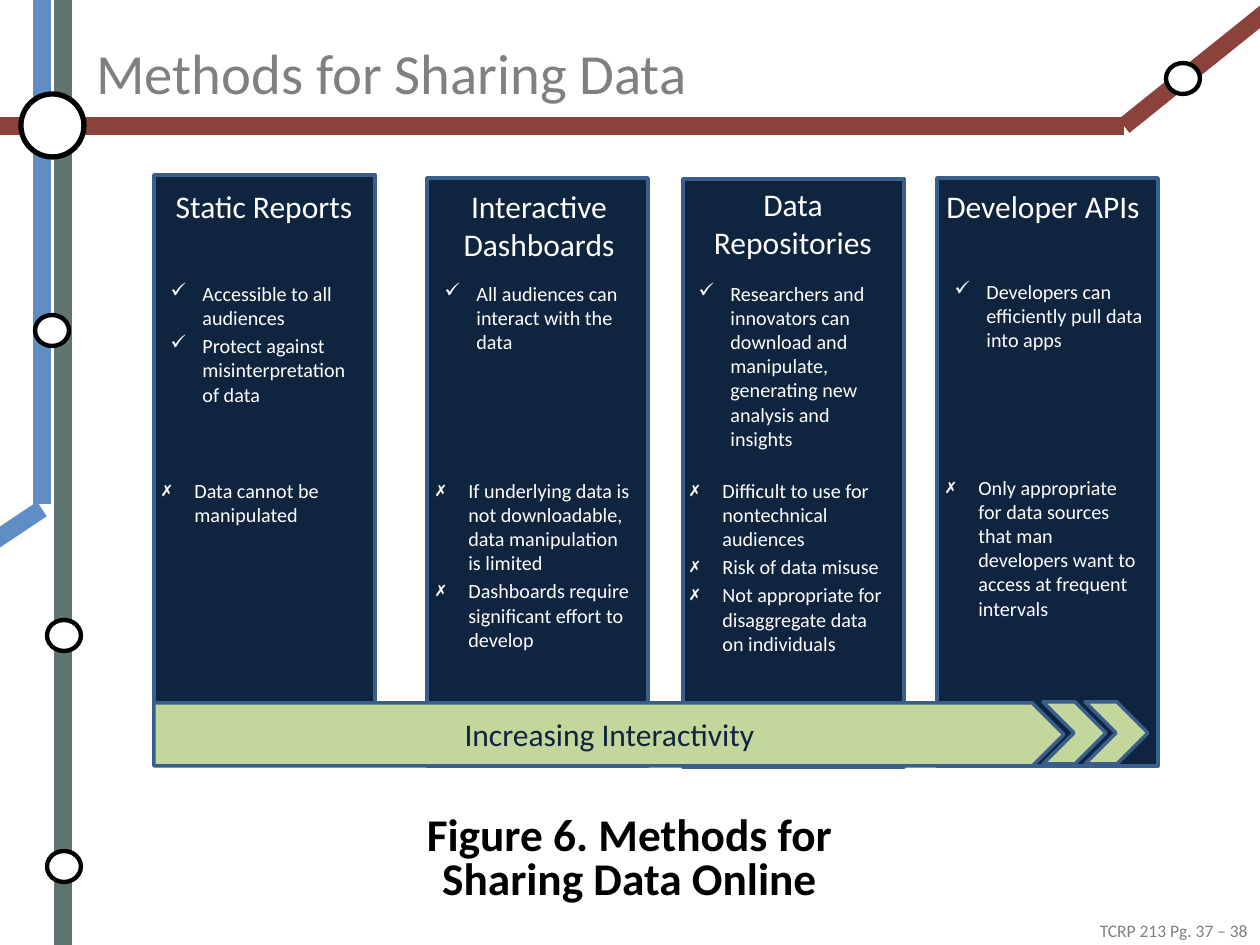
import pptx
import pptx.util
import pptx.dml.color
import pptx.enum.shapes
import pptx.enum.text
import pptx.oxml.ns
import lxml.etree

SHAPE = pptx.enum.shapes.MSO_SHAPE
ALIGN = pptx.enum.text.PP_ALIGN
ANCHOR = pptx.enum.text.MSO_ANCHOR
COLORS = {
    "white": "FFFFFF", "black": "000000", "grey": "808080",
    "green_line": "607472", "blue_line": "608DC4", "red_line": "8A423A",
    "navy": "0F243E", "border": "3A5F8C", "lime": "C3D69B",
}
ROUTES = [
    (63, 945, 63, 0, "green_line"),
    (42, 504, 42, 0, "blue_line"),
    (42, 509, -21, 551, "blue_line"),
    (0, 126, 1124, 126, "red_line"),
    (1281, 0, 1124, 126, "red_line"),
]
STOPS = [(47, 620), (47, 851), (35, 315), (1166, 63)]
PANEL_W, PANEL_H = 221, 588
HEADING_W = 236
METHODS = [
    {"panel": (154, 175), "heading": ("Static Reports", 146, 185, 47, 0.9),
     "pros": (158, 275, 158, ["Accessible to all audiences",
                              "Protect against misinterpretation of data"]),
     "cons": (150, 472, 229, ["Data cannot be manipulated"])},
    {"panel": (427, 178), "heading": ("Interactive Dashboards", 421, 181, 98, 1),
     "pros": (432, 275, 158, ["All audiences can interact with the data"]),
     "cons": (424, 472, 229, [
         "If underlying data is not downloadable, data manipulation is limited",
         "Dashboards require significant effort to develop"])},
    {"panel": (683, 179), "heading": ("Data Repositories", 675, 179, 94, 1),
     "pros": (686, 275, 198, [
         "Researchers and innovators can download and manipulate, "
         "generating new analysis and insights"]),
     "cons": (678, 472, 229, [
         "Difficult to use for nontechnical audiences",
         "Risk of data misuse",
         "Not appropriate for disaggregate data on individuals"])},
    {"panel": (937, 178), "heading": ("Developer APIs", 925, 185, 47, 0.9),
     "pros": (942, 273, 155, ["Developers can efficiently pull data into apps"]),
     "cons": (934, 469, 228, [
         "Only appropriate for data sources that man developers want "
         "to access at frequent intervals"])},
]


def px(n):
    return pptx.util.Emu(round(n * 914400 / 126))


def rgb(name):
    return pptx.dml.color.RGBColor.from_string(COLORS[name])


def add_route(s, x1, y1, x2, y2, color):
    line = s.shapes.add_connector(
        pptx.enum.shapes.MSO_CONNECTOR.STRAIGHT, px(x1), px(y1), px(x2), px(y2))
    line.line.color.rgb = rgb(color)
    line.line.width = pptx.util.Pt(10)
    lxml.etree.SubElement(line._element.spPr, pptx.oxml.ns.qn("a:effectLst"))


def add_shape(s, kind, x, y, w, h, fill, border, weight):
    sp = s.shapes.add_shape(kind, px(x), px(y), px(w), px(h))
    sp.shadow.inherit = False
    sp.fill.solid()
    sp.fill.fore_color.rgb = rgb(fill)
    sp.line.color.rgb = rgb(border)
    sp.line.width = pptx.util.Pt(weight)


def add_bullet(p, mark):
    pPr = p._p.get_or_add_pPr()
    pPr.set("marL", str(px(32)))
    pPr.set("indent", str(px(-32)))
    bullet = lxml.etree.SubElement(pPr, pptx.oxml.ns.qn("a:buChar"))
    bullet.set("char", mark)


def add_text(s, x, y, w, h, lines, size, color, align=ALIGN.LEFT, bold=False,
             spacing=1, before=0.2, mark=None, anchor=ANCHOR.TOP, wrap=True):
    tf = s.shapes.add_textbox(px(x), px(y), px(w), px(h)).text_frame
    tf.word_wrap = wrap
    tf.vertical_anchor = anchor
    for i, text in enumerate(lines):
        p = tf.paragraphs[0] if i == 0 else tf.add_paragraph()
        p.alignment = align
        p.line_spacing = spacing
        p.space_before = pptx.util.Pt(round(size * before, 1))
        if mark:
            add_bullet(p, mark)
        r = p.add_run()
        r.text = text
        r.font.name = "Calibri"
        r.font.size = pptx.util.Pt(size)
        r.font.bold = bold
        r.font.color.rgb = rgb(color)


def add_method_text(s, method):
    name, x, y, h, spacing = method["heading"]
    add_text(s, x, y, HEADING_W, h, [name], 18, "white", ALIGN.CENTER, spacing=spacing)
    for key, mark in (("pros", "✓"), ("cons", "✗")):
        x, y, h, lines = method[key]
        add_text(s, x, y, PANEL_W, h, lines, 11.5, "white", mark=mark)


def main():
    prs = pptx.Presentation()
    prs.slide_width, prs.slide_height = px(1260), px(945)
    s = prs.slides.add_slide(prs.slide_layouts[6])

    for route in ROUTES:
        add_route(s, *route)
    add_shape(s, SHAPE.OVAL, 21, 94, 63, 63, "white", "black", 3)
    for x, y in STOPS:
        add_shape(s, SHAPE.OVAL, x, y, 34, 31, "white", "black", 2.5)

    add_text(s, 84, 38, 1040, 67, ["Methods for Sharing Data"], 32.4, "grey",
             before=0, anchor=ANCHOR.MIDDLE)
    add_text(s, 1084, 914, 176, 34, ["TCRP 213 Pg. 37 – 38"], 10, "grey",
             ALIGN.RIGHT, before=0, wrap=False)
    add_text(s, 370, 811, 519, 102, ["Figure 6. Methods for Sharing Data Online"],
             25.9, "black", ALIGN.CENTER, bold=True, spacing=0.8)

    for method in METHODS:
        add_shape(s, SHAPE.RECTANGLE, *method["panel"], PANEL_W, PANEL_H,
                  "navy", "border", 2)
    add_shape(s, SHAPE.PENTAGON, 154, 703, 910, 63, "lime", "border", 2)
    for x in (1043, 1085):
        add_shape(s, SHAPE.CHEVRON, x, 702, 63, 62, "lime", "border", 2)
    for method in METHODS:
        add_method_text(s, method)
    add_text(s, 420, 709, 379, 63, ["Increasing Interactivity"], 18, "navy", ALIGN.CENTER)

    prs.save("out.pptx")


if __name__ == "__main__":
    main()
